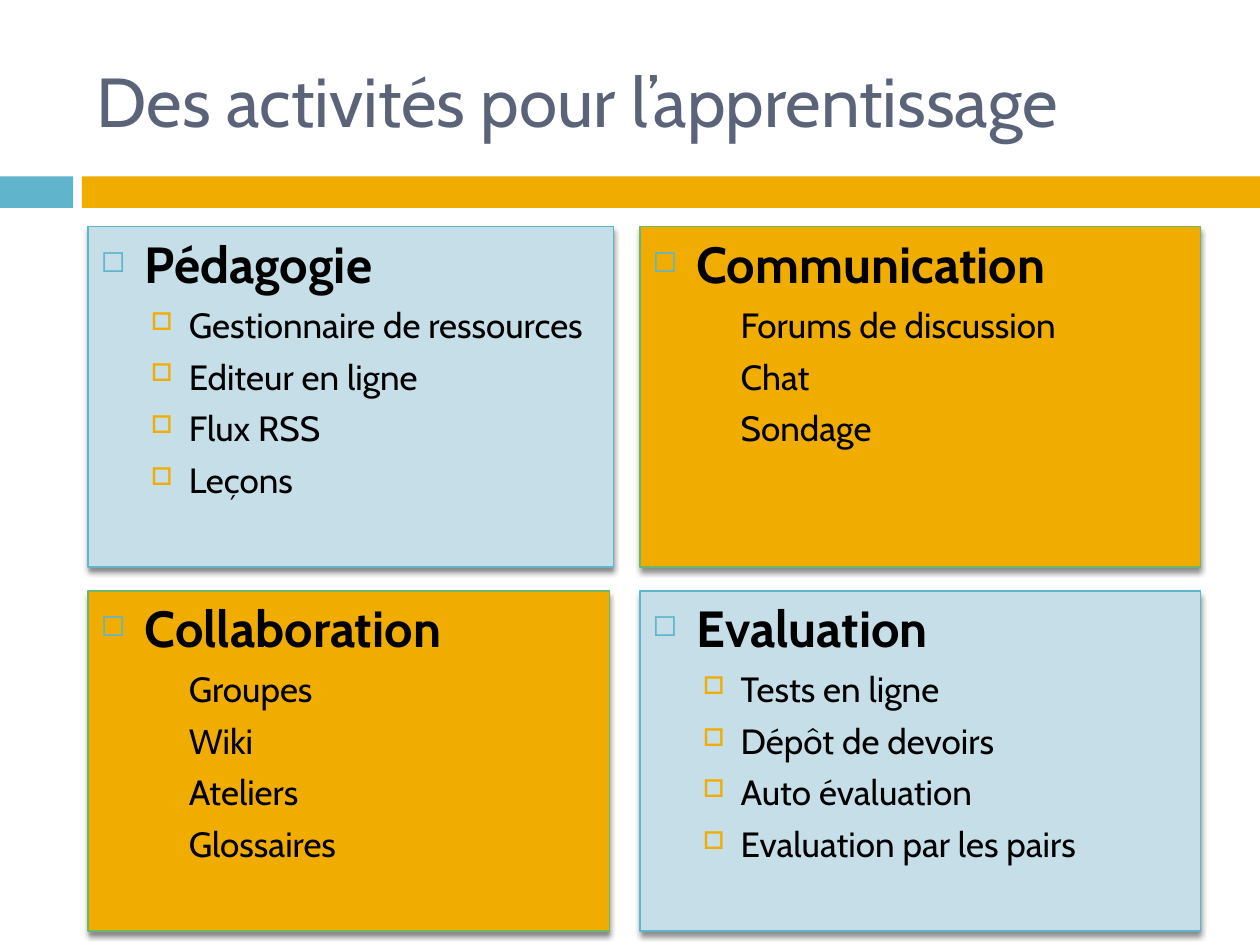
from pptx import Presentation
from pptx.dml.color import RGBColor
from pptx.enum.shapes import MSO_SHAPE as Shape
from pptx.enum.text import MSO_ANCHOR as Anchor, PP_ALIGN as Align
from pptx.oxml import parse_xml
from pptx.oxml.ns import nsdecls, qn
from pptx.util import Inches, Pt

BLUE, PALE, GOLD, GREEN = "60B5CC", "C5DEE7", "F0AD00", "6BB76D"
SLATE, BLACK = "5A6378", "000000"


def color(value):
    return RGBColor.from_string(value)


def write(paragraph, text, size, ink=BLACK, bold=False, font="Cabin", before=0):
    paragraph.alignment = Align.LEFT
    paragraph.space_before = Pt(before)
    run = paragraph.add_run()
    run.text = text
    run.font.name, run.font.size, run.font.bold = font, Pt(size), bold
    run.font.color.rgb = color(ink)


def add_xml(parent, xml):
    parent.append(parse_xml(xml.replace(">", f" {nsdecls('a')}>", 1)))


def set_bullet(paragraph, sign, ink, percent, left, hanging):
    props = paragraph._p.get_or_add_pPr()
    props.set("marL", str(Inches(left)))
    props.set("indent", str(-Inches(hanging)))
    add_xml(props, f'<a:buClr><a:srgbClr val="{ink}"/></a:buClr>')
    add_xml(props, f'<a:buSzPct val="{percent * 1000}"></a:buSzPct>')
    add_xml(props, f'<a:buChar char="{sign}"></a:buChar>')


class ActivitySlide:
    """Holds the style and the current slide."""

    heading = dict(size=29, bold=True, before=7)
    heading_bullet = dict(sign="◻", ink=BLUE, percent=60, left=0.35, hanging=0.35)
    item = dict(size=20, before=5.5)
    item_bullet = dict(sign="□", ink=GOLD, percent=70, left=0.7, hanging=0.3)

    def __init__(self, deck):
        self.slide = deck.slides.add_slide(deck.slide_layouts[6])

    def band(self, left, top, width, height, fill):
        band = self.slide.shapes.add_shape(
            Shape.RECTANGLE, *map(Inches, (left, top, width, height)))
        band.shadow.inherit = False
        band.fill.solid()
        band.fill.fore_color.rgb = color(fill)
        band.line.fill.background()
        return band

    def title(self, text, left, top, width, height):
        title = self.slide.shapes.add_textbox(
            *map(Inches, (left, top, width, height)))
        frame = title.text_frame
        frame.word_wrap = True
        frame.vertical_anchor = Anchor.MIDDLE
        write(frame.paragraphs[0], text, size=39.6, ink=SLATE)

    def panel(self, left, top, width, height, fill, edge, heading, items):
        panel = self.band(left, top, width, height, fill)
        panel.line.color.rgb = color(edge)
        panel.line.width = Pt(0.79)
        add_xml(panel._element.spPr.find(qn("a:effectLst")),
                f'<a:outerShdw blurRad="{Pt(3)}" dist="{Pt(2.4)}" dir="5400000" '
                'rotWithShape="0"><a:srgbClr val="000000">'
                '<a:alpha val="45000"/></a:srgbClr></a:outerShdw>')
        frame = panel.text_frame
        frame.word_wrap = True
        frame.vertical_anchor = Anchor.TOP
        write(frame.paragraphs[0], heading, **self.heading)
        set_bullet(frame.paragraphs[0], **self.heading_bullet)
        for text in items:
            entry = frame.add_paragraph()
            entry.level = 1
            write(entry, text, **self.item)
            set_bullet(entry, **self.item_bullet)


def main():
    deck = Presentation()
    deck.slide_width, deck.slide_height = Inches(10), Inches(7.5)
    page = ActivitySlide(deck)
    page.band(0, 1.4, 0.58, 0.25, BLUE)
    page.band(0.65, 1.4, 9.35, 0.25, GOLD)
    page.title("Des activités pour l’apprentissage", 0.67, 0.25, 8.92, 1.08)

    left, right, upper, lower, height = 0.7, 5.08, 1.8, 4.69, 2.7
    pale, gold = (PALE, BLUE), (GOLD, GREEN)
    panels = [
        (left, upper, 4.17, pale, "Pédagogie",
         ["Gestionnaire de ressources", "Editeur en ligne", "Flux RSS", "Leçons"]),
        (right, upper, 4.45, gold, "Communication",
         ["Forums de discussion", "Chat", "Sondage"]),
        (left, lower, 4.14, gold, "Collaboration",
         ["Groupes", "Wiki", "Ateliers", "Glossaires"]),
        (right, lower, 4.45, pale, "Evaluation",
         ["Tests en ligne", "Dépôt de devoirs", "Auto évaluation",
          "Evaluation par les pairs"]),
    ]
    for x, y, width, tones, heading, items in panels:
        page.panel(x, y, width, height, *tones, heading, items)
    deck.save("out.pptx")


if __name__ == "__main__":
    main()
